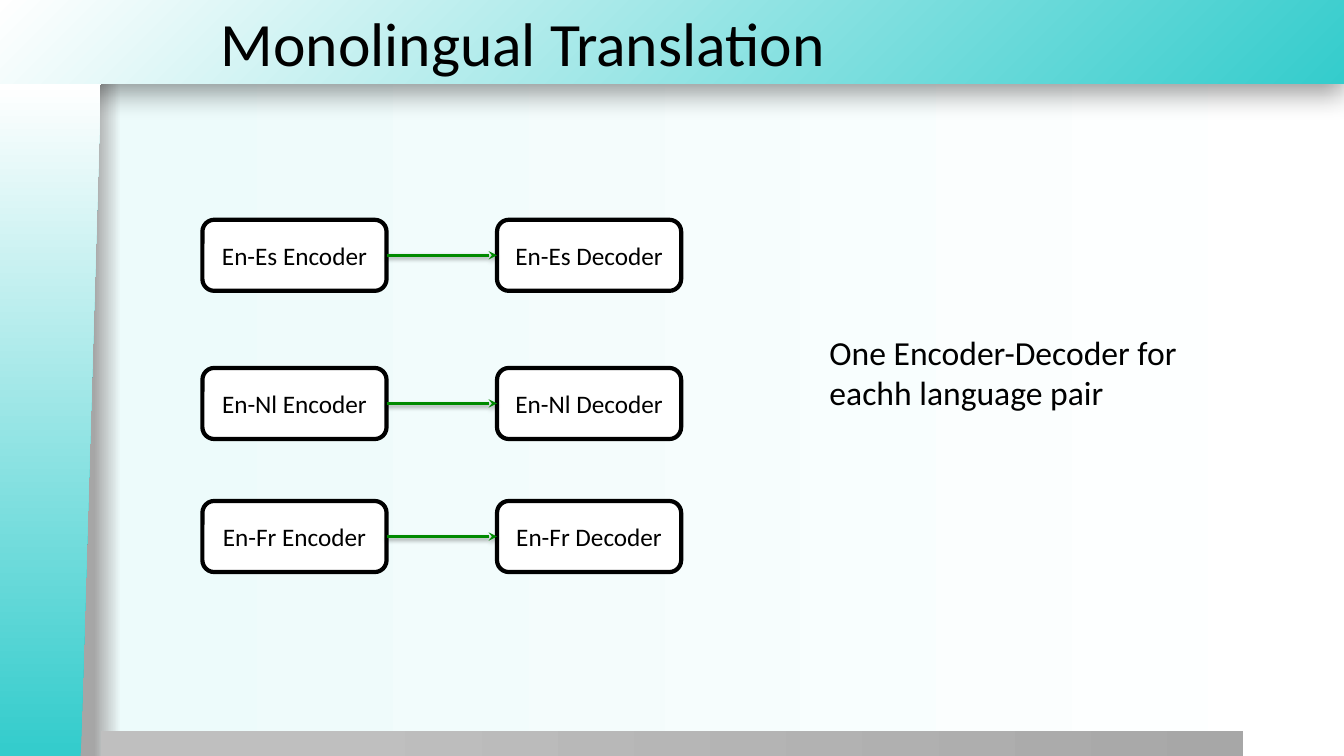
"""Build the Monolingual Translation slide with its encoder-decoder pairs."""
from dataclasses import dataclass

from lxml.etree import SubElement
from pptx import Presentation
from pptx.dml.color import RGBColor
from pptx.enum.shapes import MSO_CONNECTOR, MSO_SHAPE
from pptx.enum.text import MSO_ANCHOR, PP_ALIGN
from pptx.oxml.ns import qn
from pptx.util import Inches, Pt

WIDTH, HEIGHT = Inches(13.33), Inches(7.5)


@dataclass(frozen=True)
class Theme:
    font: str = "Calibri"
    ink: str = "000000"
    paper: str = "FFFFFF"
    teal: str = "34CCCC"
    mist: str = "EDFBFB"
    edge_grey: str = "A6A6A6"
    light_grey: str = "BFBFBF"
    dark_grey: str = "A7A7A7"
    arrow: str = "008A00"
    title_size: int = 44
    note_size: int = 24
    label_size: int = 18
    box_line: int = 3
    arrow_line: int = 2


@dataclass(frozen=True)
class Area:
    """Position and size in percent of the slide."""
    left: float
    top: float
    width: float
    height: float

    def emu(self) -> tuple[int, int, int, int]:
        return (round(WIDTH * self.left / 100), round(HEIGHT * self.top / 100),
                round(WIDTH * self.width / 100), round(HEIGHT * self.height / 100))


@dataclass(frozen=True)
class Shadow:
    opacity: int
    blur: float
    distance: float


@dataclass(frozen=True)
class LanguagePair:
    code: str
    top: float


THEME = Theme()
BANNER_HEIGHT = 11.07
BANNER = Area(0, 0, 100, BANNER_HEIGHT)
FOOTER = Area(7.5, 96.67, 85, 3.47)
SIDEBAR = Area(0, BANNER_HEIGHT, 7.5, 100 - BANNER_HEIGHT)
TITLE = Area(15.68, 0, 84.32, BANNER_HEIGHT)
NOTE = Area(60.98, 43.2, 31.58, 16.8)
ENCODER_LEFT, DECODER_LEFT = 15.06, 36.98
BOX_WIDTH, BOX_HEIGHT = 13.7, 9.4
PAIRS = (LanguagePair("En-Es", 29.07), LanguagePair("En-Nl", 48.67), LanguagePair("En-Fr", 66.27))
BANNER_SHADOW = Shadow(40, 20, 6)
ARROW_SHADOW = Shadow(38, 3.1, 1.6)


def set_gradient(fill, element, stops: dict[int, str], radial: bool = False) -> None:
    fill.gradient()
    gradient = element.find(".//" + qn("a:gradFill"))
    for child in list(gradient):
        gradient.remove(child)
    gradient.set("rotWithShape", "1")
    stop_list = SubElement(gradient, qn("a:gsLst"))
    for percent, colour in stops.items():
        stop = SubElement(stop_list, qn("a:gs"), pos=str(percent * 1000))
        SubElement(stop, qn("a:srgbClr"), val=colour)
    if radial:
        focus = SubElement(gradient, qn("a:path"), path="circle")
        SubElement(focus, qn("a:fillToRect"), l="100000", t="100000")
    else:
        SubElement(gradient, qn("a:lin"), ang="0", scaled="0")


def cast_shadow(effects, shadow: Shadow) -> None:
    outer = SubElement(effects, qn("a:outerShdw"), blurRad=str(Pt(shadow.blur)),
                       dist=str(Pt(shadow.distance)), dir="5400000", rotWithShape="0")
    colour = SubElement(outer, qn("a:srgbClr"), val=THEME.ink)
    SubElement(colour, qn("a:alpha"), val=str(shadow.opacity * 1000))


def add_panel(slide, preset: MSO_SHAPE, bounds: tuple[int, int, int, int],
              stops: dict[int, str], radial: bool = False):
    panel = slide.shapes.add_shape(preset, *bounds)
    panel.shadow.inherit = False
    panel.line.fill.background()
    set_gradient(panel.fill, panel.element.spPr, stops, radial)
    return panel


def add_sidebar(slide) -> None:
    left, top, width, height = SIDEBAR.emu()
    offset = (height - width) // 2
    sidebar = add_panel(slide, MSO_SHAPE.FLOWCHART_MANUAL_INPUT,
                        (left - offset, top + offset, height, width),
                        {1: THEME.teal, 100: THEME.paper})
    sidebar.rotation = 270
    sidebar.element.spPr.find(qn("a:xfrm")).set("flipV", "1")


def write(frame, text: str, size: int, anchor: MSO_ANCHOR, align: PP_ALIGN) -> None:
    frame.word_wrap = True
    frame.vertical_anchor = anchor
    paragraph = frame.paragraphs[0]
    paragraph.alignment = align
    run = paragraph.add_run()
    run.text = text
    run.font.name = THEME.font
    run.font.size = Pt(size)
    run.font.color.rgb = RGBColor.from_string(THEME.ink)


def add_text(slide, area: Area, text: str, size: int, anchor: MSO_ANCHOR) -> None:
    frame = slide.shapes.add_textbox(*area.emu()).text_frame
    write(frame, text, size, anchor, PP_ALIGN.LEFT)


def add_coder(slide, left: float, top: float, label: str):
    area = Area(left, top, BOX_WIDTH, BOX_HEIGHT)
    coder = slide.shapes.add_shape(MSO_SHAPE.ROUNDED_RECTANGLE, *area.emu())
    coder.shadow.inherit = False
    coder.fill.solid()
    coder.fill.fore_color.rgb = RGBColor.from_string(THEME.paper)
    coder.line.color.rgb = RGBColor.from_string(THEME.ink)
    coder.line.width = Pt(THEME.box_line)
    write(coder.text_frame, label, THEME.label_size, MSO_ANCHOR.MIDDLE, PP_ALIGN.CENTER)
    return coder


def add_pair(slide, pair: LanguagePair) -> None:
    encoder = add_coder(slide, ENCODER_LEFT, pair.top, f"{pair.code} Encoder")
    decoder = add_coder(slide, DECODER_LEFT, pair.top, f"{pair.code} Decoder")
    arrow = slide.shapes.add_connector(MSO_CONNECTOR.STRAIGHT, 0, 0, 0, 0)
    arrow.begin_connect(encoder, 3)
    arrow.end_connect(decoder, 1)
    arrow.line.color.rgb = RGBColor.from_string(THEME.arrow)
    arrow.line.width = Pt(THEME.arrow_line)
    properties = arrow.element.spPr
    SubElement(properties.find(qn("a:ln")), qn("a:tailEnd"), type="stealth")
    cast_shadow(SubElement(properties, qn("a:effectLst")), ARROW_SHADOW)


def main() -> None:
    presentation = Presentation()
    presentation.slide_width, presentation.slide_height = WIDTH, HEIGHT
    slide = presentation.slides.add_slide(presentation.slide_layouts[6])
    set_gradient(slide.background.fill, slide.element,
                 {7: THEME.edge_grey, 9: THEME.mist, 100: THEME.paper})
    banner = add_panel(slide, MSO_SHAPE.RECTANGLE, BANNER.emu(),
                       {0: THEME.teal, 100: THEME.paper}, radial=True)
    cast_shadow(banner.element.spPr.find(qn("a:effectLst")), BANNER_SHADOW)
    add_panel(slide, MSO_SHAPE.RECTANGLE, FOOTER.emu(),
              {20: THEME.light_grey, 100: THEME.dark_grey})
    add_sidebar(slide)
    add_text(slide, TITLE, "Monolingual Translation", THEME.title_size, MSO_ANCHOR.MIDDLE)
    add_text(slide, NOTE, "One Encoder-Decoder for eachh language pair",
             THEME.note_size, MSO_ANCHOR.TOP)
    for pair in PAIRS:
        add_pair(slide, pair)
    presentation.save("out.pptx")


if __name__ == "__main__":
    main()
